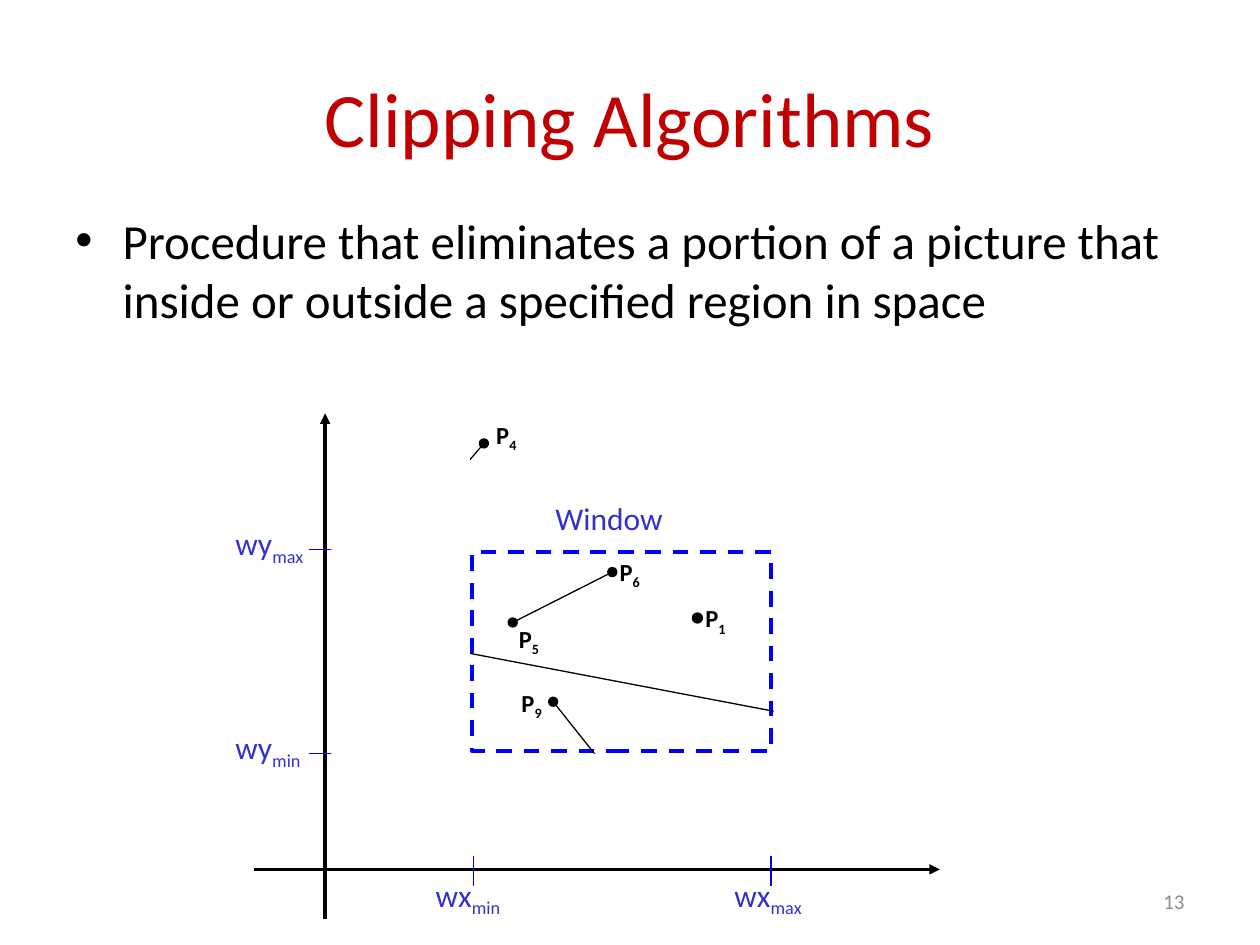
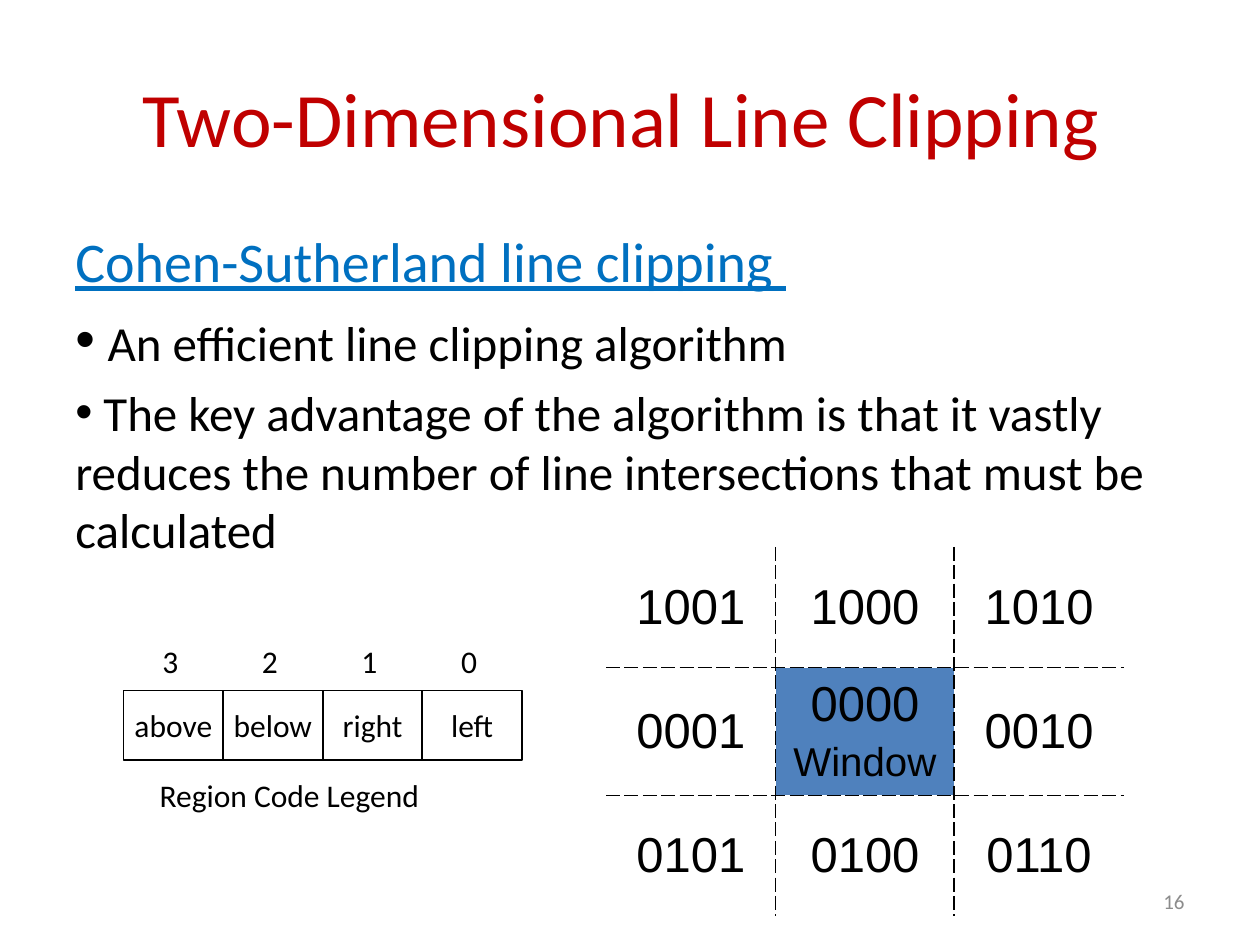
"""Build two slides on clipping algorithms and Cohen-Sutherland region codes."""
from dataclasses import dataclass

from lxml import etree
from pptx import Presentation
from pptx.dml.color import RGBColor
from pptx.enum.dml import MSO_LINE
from pptx.enum.shapes import MSO_CONNECTOR, MSO_SHAPE
from pptx.enum.text import MSO_ANCHOR, MSO_AUTO_SIZE, PP_ALIGN
from pptx.oxml.ns import qn
from pptx.util import Pt

RECTANGLE, OVAL = MSO_SHAPE.RECTANGLE, MSO_SHAPE.OVAL
STRAIGHT = MSO_CONNECTOR.STRAIGHT
DASH = MSO_LINE.DASH
LEFT, CENTER, RIGHT = PP_ALIGN.LEFT, PP_ALIGN.CENTER, PP_ALIGN.RIGHT
TOP, MIDDLE = MSO_ANCHOR.TOP, MSO_ANCHOR.MIDDLE
FIT_SHAPE, NO_FIT = MSO_AUTO_SIZE.SHAPE_TO_FIT_TEXT, MSO_AUTO_SIZE.NONE


@dataclass(frozen=True)
class Theme:
    font: str = "Calibri"
    code_font: str = "Arial"
    title: RGBColor = RGBColor(0xC0, 0x00, 0x00)
    heading: RGBColor = RGBColor(0x00, 0x70, 0xC0)
    text: RGBColor = RGBColor(0x00, 0x00, 0x00)
    page: RGBColor = RGBColor(0xFF, 0xFF, 0xFF)
    number: RGBColor = RGBColor(0x8C, 0x8C, 0x8C)
    axis_label: RGBColor = RGBColor(0x33, 0x33, 0xCC)
    window_line: RGBColor = RGBColor(0x00, 0x00, 0xFF)
    window_fill: RGBColor = RGBColor(0x4F, 0x81, 0xBD)
    title_size: int = 44
    heading_size: int = 32
    body_size: int = 28
    window_size: int = 23
    label_size: int = 18
    point_size: int = 14
    number_size: int = 12


theme = Theme()


def write_paragraph(paragraph, text, size, color=theme.text, font=theme.font,
                    align=LEFT, subscript="", bullet=False, before=0):
    paragraph.alignment = align
    paragraph.space_before = Pt(before)
    if bullet:
        properties = paragraph._p.get_or_add_pPr()
        etree.SubElement(properties, qn("a:buFont"), typeface="Arial")
        etree.SubElement(properties, qn("a:buChar"), char="•")
    paragraph.font.size = Pt(size)
    paragraph.font.name = font
    paragraph.font.color.rgb = color
    paragraph.add_run().text = text
    if subscript:
        run = paragraph.add_run()
        run.text = subscript
        run._r.get_or_add_rPr().set("baseline", "-25000")
    return paragraph


def add_text_box(shapes, box, text, size, color=theme.text, wrap=False, anchor=TOP, **style):
    frame = shapes.add_textbox(*map(Pt, box)).text_frame
    frame.word_wrap = wrap
    frame.auto_size = NO_FIT if wrap else FIT_SHAPE
    frame.vertical_anchor = anchor
    write_paragraph(frame.paragraphs[0], text, size, color, **style)
    return frame


presentation = Presentation()
presentation.slide_width, presentation.slide_height = Pt(720), Pt(540)
slides = []
for title, number in (("Clipping Algorithms", "13"), ("Two-Dimensional Line Clipping ", "16")):
    slide = presentation.slides.add_slide(presentation.slide_layouts[6])
    add_text_box(slide.shapes, (36, 21.6, 648, 90), title, theme.title_size, theme.title,
                 wrap=True, anchor=MIDDLE, align=CENTER)
    add_text_box(slide.shapes, (516, 500.5, 168, 28.75), number, theme.number_size,
                 theme.number, wrap=True, anchor=MIDDLE, align=RIGHT)
    slides.append(slide)
window_slide, code_slide = slides

body = add_text_box(
    window_slide.shapes, (36, 116.6, 648, 356.4),
    "Procedure that eliminates a portion of a picture that inside or outside "
    "a specified region in space", theme.body_size, wrap=True, bullet=True)
hanging = body.paragraphs[0]._p.get_or_add_pPr()
hanging.set("marL", str(Pt(27)))
hanging.set("indent", str(Pt(-27)))

window = window_slide.shapes.add_shape(RECTANGLE, Pt(270), Pt(315.4), Pt(170.6), Pt(113.8))
window.shadow.inherit = False
window.fill.background()
window.line.color.rgb = theme.window_line
window.line.width = Pt(2.25)
window.line.dash_style = DASH

axis = (theme.text, 2, None, "triangle")
tick = (theme.window_line, 0.75, None, None)
segment = (theme.text, 0.75, "oval", "oval")
lines = (
    (145.4, 496.8, 537.1, 496.8, axis),
    (185.8, 524.9, 185.8, 236.2, axis),
    (195.8, 313.9, 176.4, 313.9, tick),
    (193.7, 430.6, 176.4, 430.6, tick),
    (270.7, 488.9, 270.7, 506.2, tick),
    (440.6, 488.9, 440.6, 506.2, tick),
    (293, 355.7, 349.9, 326.9, segment),
    (213.8, 326.9, 276.5, 253.4, segment),
    (316.1, 401, 361.4, 457.9, segment),
    (236.2, 367.2, 474.5, 412.6, segment),
)
for *ends, (color, width, head, tail) in lines:
    connector = window_slide.shapes.add_connector(STRAIGHT, *map(Pt, ends))
    connector.line.color.rgb = color
    connector.line.width = Pt(width)
    outline = connector.line._get_or_add_ln()
    for tag, arrowhead in (("a:headEnd", head), ("a:tailEnd", tail)):
        if arrowhead:
            etree.SubElement(outline, qn(tag), type=arrowhead)
    etree.SubElement(connector._element.spPr, qn("a:effectLst"))

for left, top, width, text, subscript in (
    (127.4, 295.9, 59, "wy", "max"),
    (127.4, 412.6, 55.4, "wy", "min"),
    (241.9, 496.8, 55.4, "wx", "min"),
    (412.6, 496.8, 59, "wx", "max"),
    (310.3, 281.5, 78.5, "Window", ""),
):
    add_text_box(window_slide.shapes, (left, top, width, 28.8), text, theme.label_size,
                 theme.axis_label, subscript=subscript)

for left, top, index in (
    (396, 341.3, "1"),
    (347, 314.6, "6"),
    (289.4, 352.8, "5"),
    (290.9, 389.5, "9"),
    (276.5, 236.2, "4"),
):
    label = add_text_box(window_slide.shapes, (left, top, 28.8, 23.8), "P",
                         theme.point_size, subscript=index)
    label.paragraphs[0].font.bold = True

for kind, color, box in (
    (OVAL, theme.text, (395.3, 349.9, 6.5, 6.5)),
    (RECTANGLE, theme.page, (265, 430.6, 187.2, 49.7)),
    (RECTANGLE, theme.page, (189.4, 254.9, 79.2, 218.2)),
    (RECTANGLE, theme.page, (442.1, 251.3, 111.6, 218.2)),
):
    shape = window_slide.shapes.add_shape(kind, *map(Pt, box))
    shape.shadow.inherit = False
    shape.fill.solid()
    shape.fill.fore_color.rgb = color
    shape.line.fill.background()

body = add_text_box(code_slide.shapes, (36, 126, 648, 356.4), "Cohen-Sutherland line clipping ",
                    theme.heading_size, theme.heading, wrap=True)
body.paragraphs[0].font.underline = True
advantage = write_paragraph(body.add_paragraph(), " ", theme.body_size, bullet=True, before=6.4)
advantage.runs[0].font.size = Pt(theme.heading_size)
advantage.add_run().text = "An efficient line clipping algorithm"
write_paragraph(
    body.add_paragraph(),
    " The key advantage of the algorithm is that it vastly reduces the number of line "
    "intersections that must be calculated", theme.body_size, bullet=True, before=5.6)

legend = code_slide.shapes.add_group_shape().shapes
bit_width = 56.9
for column, meaning in enumerate(("above", "below", "right", "left")):
    left = 70.6 + column * bit_width
    bit = legend.add_shape(RECTANGLE, Pt(left), Pt(394.6), Pt(bit_width), Pt(39.6))
    bit.shadow.inherit = False
    bit.fill.background()
    bit.line.color.rgb = theme.text
    bit.line.width = Pt(1)
    bit.text_frame.word_wrap = False
    bit.text_frame.vertical_anchor = MIDDLE
    write_paragraph(bit.text_frame.paragraphs[0], meaning, theme.label_size, align=CENTER)
    add_text_box(legend, (left + 15.1, 363.6, 24.5, 28.8), str(3 - column), theme.label_size)
add_text_box(legend, (84.2, 439.9, 184.3, 28.8), "Region Code Legend", theme.label_size)

region_codes = (
    ("1001", "1000", "1010"),
    ("0001", "0000", "0010"),
    ("0101", "0100", "0110"),
)
table = code_slide.shapes.add_table(3, 3, Pt(346.3), Pt(312.5), Pt(296), Pt(207)).table
table.first_row = table.horz_banding = False
for column, width in zip(table.columns, (97, 102, 97)):
    column.width = Pt(width)
for row_index, codes in enumerate(region_codes):
    for column_index, code in enumerate(codes):
        cell = table.cell(row_index, column_index)
        cell.vertical_anchor = MIDDLE
        write_paragraph(cell.text_frame.paragraphs[0], code, theme.body_size,
                        font=theme.code_font, align=CENTER)
        inner_edges = (("a:lnL", column_index > 0), ("a:lnR", column_index < 2),
                       ("a:lnT", row_index > 0), ("a:lnB", row_index < 2))
        for tag, inner in inner_edges:
            border = etree.SubElement(cell._tc.get_or_add_tcPr(), qn(tag), w=str(Pt(1)))
            if inner:
                fill = etree.SubElement(border, qn("a:solidFill"))
                etree.SubElement(fill, qn("a:srgbClr"), val=str(theme.text))
                etree.SubElement(border, qn("a:prstDash"), val="sysDash")
            else:
                etree.SubElement(border, qn("a:noFill"))
        cell.fill.background()

center = table.cell(1, 1)
center.fill.solid()
center.fill.fore_color.rgb = theme.window_fill
write_paragraph(center.text_frame.add_paragraph(), "Window", theme.window_size,
                font=theme.code_font, align=CENTER, before=4.6)

presentation.save("out.pptx")
